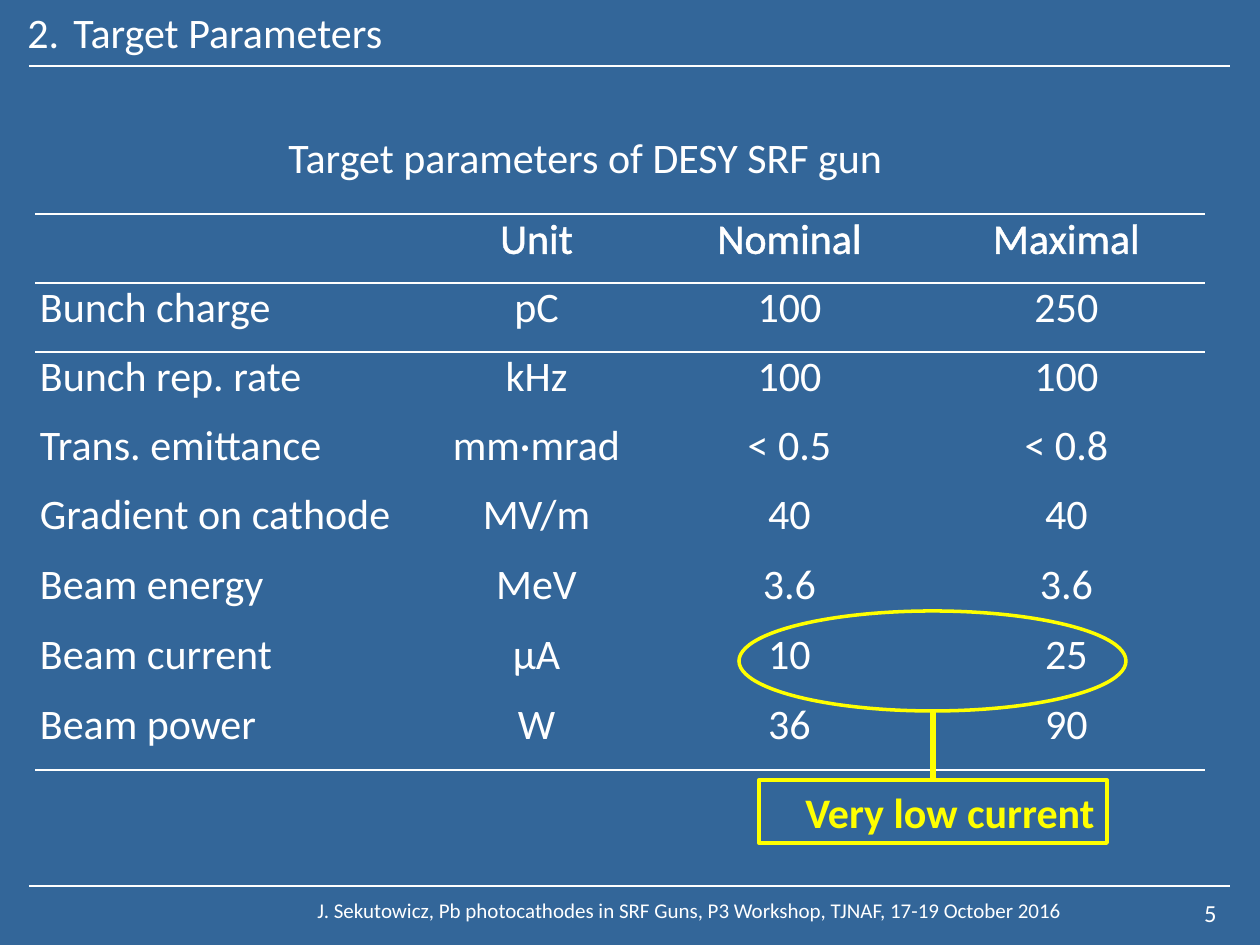
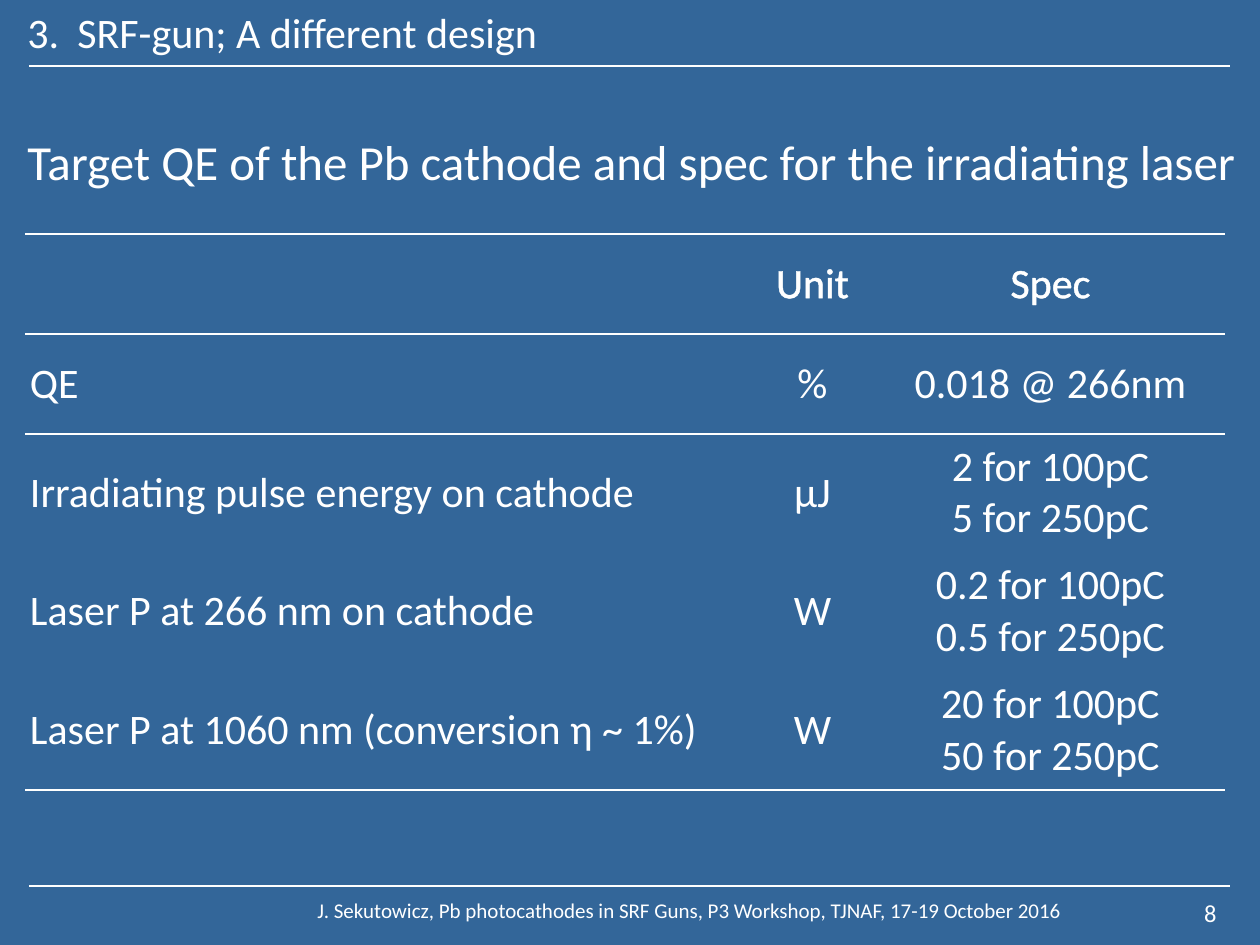
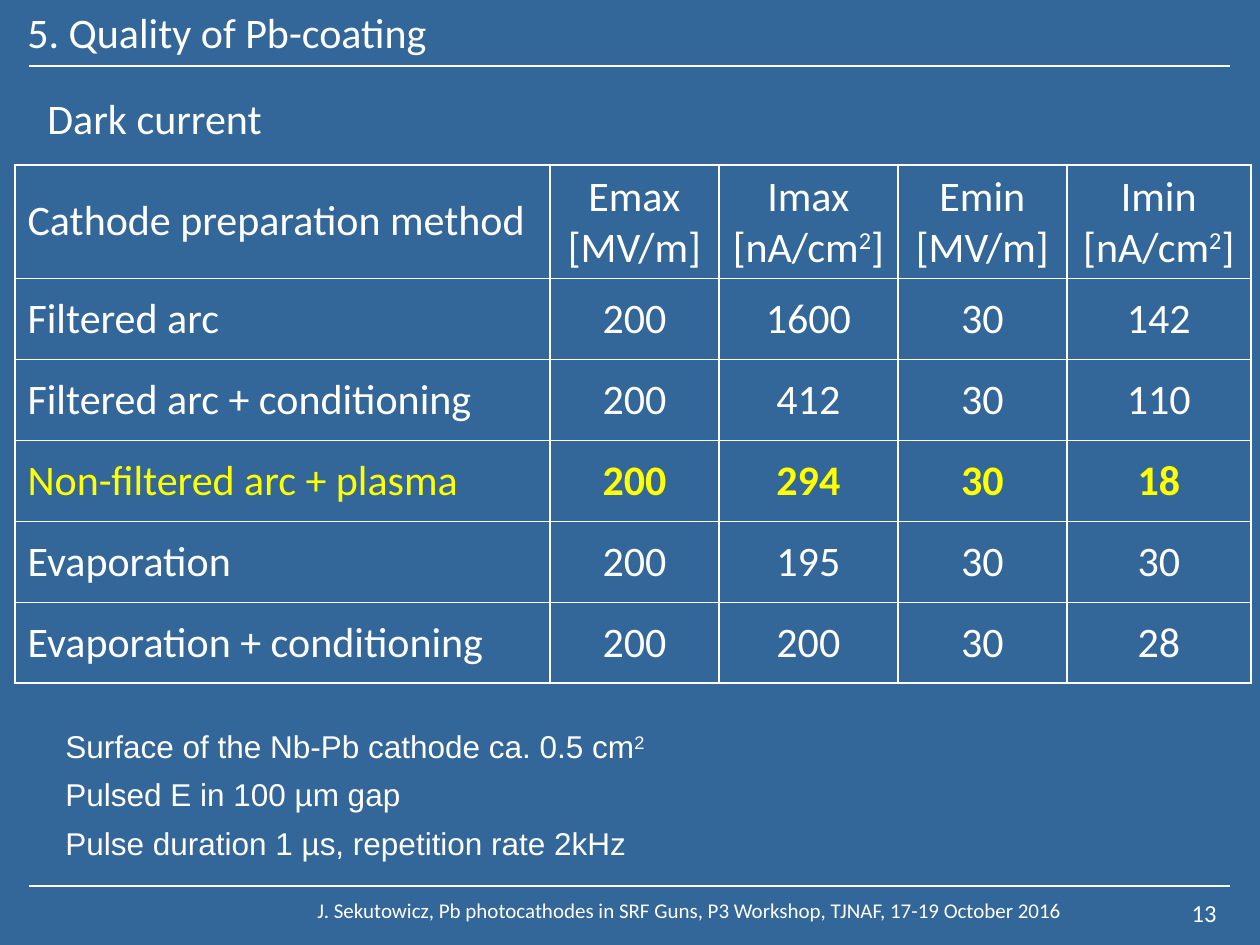
from dataclasses import dataclass

from lxml.etree import SubElement
from pptx import Presentation
from pptx.dml.color import RGBColor
from pptx.enum.shapes import MSO_CONNECTOR as Connector, MSO_SHAPE as Preset
from pptx.enum.text import MSO_ANCHOR as Anchor, PP_ALIGN as Align
from pptx.oxml.ns import qn
from pptx.util import Emu, Pt

PX_PER_INCH = 126
PLAIN_TABLE = "{2D5ABB26-0587-4C30-8999-92F81FD0307C}"
FOOTER = "J. Sekutowicz, Pb photocathodes in SRF Guns, P3 Workshop, TJNAF, 17-19 October 2016"


@dataclass(frozen=True)
class Theme:
    ground: str = "336699"
    ink: str = "FFFFFF"
    accent: str = "FFFF00"
    font: str = "Calibri"
    note_font: str = "Arial"
    headline: int = 28
    body: int = 24
    note: int = 18
    page: int = 14
    footer: int = 12


THEME = Theme()


def px(length):
    return Emu(round(length * 914400 / PX_PER_INCH))


def rgb(code):
    return RGBColor.from_string(code)


def add_solid_line(parent, tag, color, points):
    line = SubElement(parent, qn(tag), w=str(Pt(points)))
    fill = SubElement(line, qn("a:solidFill"))
    SubElement(fill, qn("a:srgbClr"), val=color)
    return line


def write(frame, text, size=THEME.body, color=THEME.ink, font=THEME.font, bold=False,
          align=Align.LEFT, space=0, hang=0, number=None, outlined=False):
    for index, line in enumerate(text.split("\n")):
        paragraph = frame.add_paragraph() if index else frame.paragraphs[0]
        paragraph.alignment = align
        if index and space:
            paragraph.space_before = Pt(space)
        if hang:
            properties = paragraph._p.get_or_add_pPr()
            properties.set("marL", str(px(hang)))
            properties.set("indent", str(-px(hang)))
            if number:
                SubElement(properties, qn("a:buAutoNum"), type="arabicPeriod", startAt=str(number))
        first, *raised = line.split("^")
        pieces = [(first, False)]
        for part in raised:
            pieces += [(part[0], True), (part[1:], False)]
        for piece, is_raised in pieces:
            if not piece:
                continue
            run = paragraph.add_run()
            run.text = piece
            run.font.size = Pt(size)
            run.font.name = font
            run.font.bold = bold
            run.font.color.rgb = rgb(color)
            properties = run._r.get_or_add_rPr()
            if is_raised:
                properties.set("baseline", "30000")
            if outlined:
                properties.insert(0, add_solid_line(properties, "a:ln", THEME.ink, 0.75))


class Deck:
    def __init__(self, theme):
        self.theme = theme
        self.deck = Presentation()
        self.deck.slide_width, self.deck.slide_height = px(1260), px(945)
        ground = self.deck.slide_master.background.fill
        ground.solid()
        ground.fore_color.rgb = rgb(theme.ground)
        self.slide = None

    def start(self, title, page, **title_format):
        self.slide = self.deck.slides.add_slide(self.deck.slide_layouts[6])
        for y in (66, 886):
            self.line(29, y, 1230, y)
        self.text(1101, 892, 128, 47, str(page), size=self.theme.page, align=Align.RIGHT)
        self.text(253, 891, 873, 54, FOOTER, size=self.theme.footer, align=Align.CENTER)
        self.text(15, 0, 1236, 63, title, **title_format)

    def text(self, x, y, width, height, words, wrap=True, **style):
        box = self.slide.shapes.add_textbox(px(x), px(y), px(width), px(height))
        box.text_frame.word_wrap = wrap
        write(box.text_frame, words, **style)

    def line(self, x1, y1, x2, y2, color=THEME.ink, points=0.75):
        rule = self.slide.shapes.add_connector(Connector.STRAIGHT, px(x1), px(y1), px(x2), px(y2))
        rule.line.color.rgb = rgb(color)
        rule.line.width = Pt(points)
        SubElement(rule._element.spPr, qn("a:effectLst"))

    def outline(self, preset, x, y, width, height, points, words="", **style):
        mark = self.slide.shapes.add_shape(preset, px(x), px(y), px(width), px(height))
        mark.shadow.inherit = False
        mark.fill.background()
        mark.line.color.rgb = rgb(self.theme.accent)
        mark.line.width = Pt(points)
        mark.text_frame.vertical_anchor = Anchor.TOP
        if words:
            write(mark.text_frame, words, color=self.theme.accent, **style)

    def table(self, x, y, widths, heights, rows, grid=False, anchor=Anchor.MIDDLE, highlight=None):
        table = self.slide.shapes.add_table(
            len(rows), len(widths), px(x), px(y), px(sum(widths)), px(sum(heights))).table
        table.first_row = table.horz_banding = False
        table._tbl.tblPr.find(qn("a:tableStyleId")).text = PLAIN_TABLE
        for column, width in zip(table.columns, widths):
            column.width = px(width)
        for row, height in zip(table.rows, heights):
            row.height = px(height)
        last = len(rows) - 1
        for r, values in enumerate(rows):
            sides = "LRTB" if grid else {0: "TB", 1: "T", last: "B"}.get(r, "")
            for c, value in enumerate(values):
                cell = table.cell(r, c)
                cell.vertical_anchor = anchor
                if not grid:
                    cell.margin_left = cell.margin_right = px(5)
                    cell.margin_top = cell.margin_bottom = 0
                for side in sides:
                    add_solid_line(cell._tc.get_or_add_tcPr(), f"a:ln{side}", self.theme.ink, 1)
                cell.fill.background()
                write(cell.text_frame, value,
                      align=Align.CENTER if c else Align.LEFT,
                      color=self.theme.accent if r == highlight else self.theme.ink,
                      bold=r == highlight and c > 0,
                      outlined=r == 0 and not grid)


def target_parameters(deck):
    deck.start("Target Parameters", 5, hang=46, number=2)
    parameters = [
        ("", "Unit", "Nominal", "Maximal"),
        ("Bunch charge", "pC", "100", "250"),
        ("Bunch rep. rate", "kHz", "100", "100"),
        ("Trans. emittance", "mm·mrad", "< 0.5", "< 0.8"),
        ("Gradient on cathode", "MV/m", "40", "40"),
        ("Beam energy", "MeV", "3.6", "3.6"),
        ("Beam current", "µA", "10", "25"),
        ("Beam power", "W", "36", "90"),
    ]
    deck.table(35, 214, [387, 229, 277, 277], [69] * 4 + [70] * 4, parameters, anchor=Anchor.TOP)
    deck.text(276, 125, 625, 63, "Target parameters of DESY SRF gun", wrap=False)
    deck.outline(Preset.OVAL, 739, 611, 387, 100, 2)
    deck.outline(Preset.RECTANGLE, 759, 780, 348, 63, 2.25, "Very low current",
                 bold=True, align=Align.RIGHT)
    deck.line(933, 711, 933, 780, color=deck.theme.accent, points=3)


def laser_requirements(deck):
    deck.start("3.\tSRF-gun; A different design", 8, hang=50)
    requirements = [
        ("", "Unit", "Spec"),
        ("QE", "%", "0.018 @ 266nm"),
        ("Irradiating pulse energy on cathode", "µJ", "2 for 100pC\n5 for 250pC"),
        ("Laser P at 266 nm on cathode", "W", "0.2 for 100pC\n0.5 for 250pC"),
        ("Laser P at 1060 nm (conversion ƞ ~ 1%)", "W", "20 for 100pC\n50 for 250pC"),
    ]
    deck.table(25, 234, [724, 127, 349], [100, 100, 118, 119, 119], requirements)
    deck.text(15, 125, 1236, 72, "Target QE of the Pb cathode and spec for the irradiating laser",
              wrap=False, size=deck.theme.headline)


def coating_quality(deck):
    deck.start("5. Quality of Pb-coating", 13)
    field, current = "[MV/m]", "[nA/cm^2]"
    dark_currents = [
        ("Cathode preparation method", f"Emax\n{field}", f"Imax\n{current}",
         f"Emin\n{field}", f"Imin\n{current}"),
        ("Filtered arc", "200", "1600", "30", "142"),
        ("Filtered arc + conditioning", "200", "412", "30", "110"),
        ("Non-filtered arc + plasma", "200", "294", "30", "18"),
        ("Evaporation", "200", "195", "30", "30"),
        ("Evaporation + conditioning", "200", "200", "30", "28"),
    ]
    deck.table(15, 165, [535, 169, 179, 169, 184], [113] + [81] * 5, dark_currents,
               grid=True, highlight=3)
    deck.text(53, 721, 687, 149,
              "Surface of the Nb-Pb cathode ca. 0.5 cm^2\n"
              "Pulsed E in 100 µm gap\n"
              "Pulse duration 1 µs, repetition rate 2kHz",
              size=deck.theme.note, font=deck.theme.note_font, space=6)
    deck.text(35, 86, 445, 63, "Dark current")


def main():
    deck = Deck(THEME)
    target_parameters(deck)
    laser_requirements(deck)
    coating_quality(deck)
    deck.deck.save("out.pptx")


if __name__ == "__main__":
    main()
